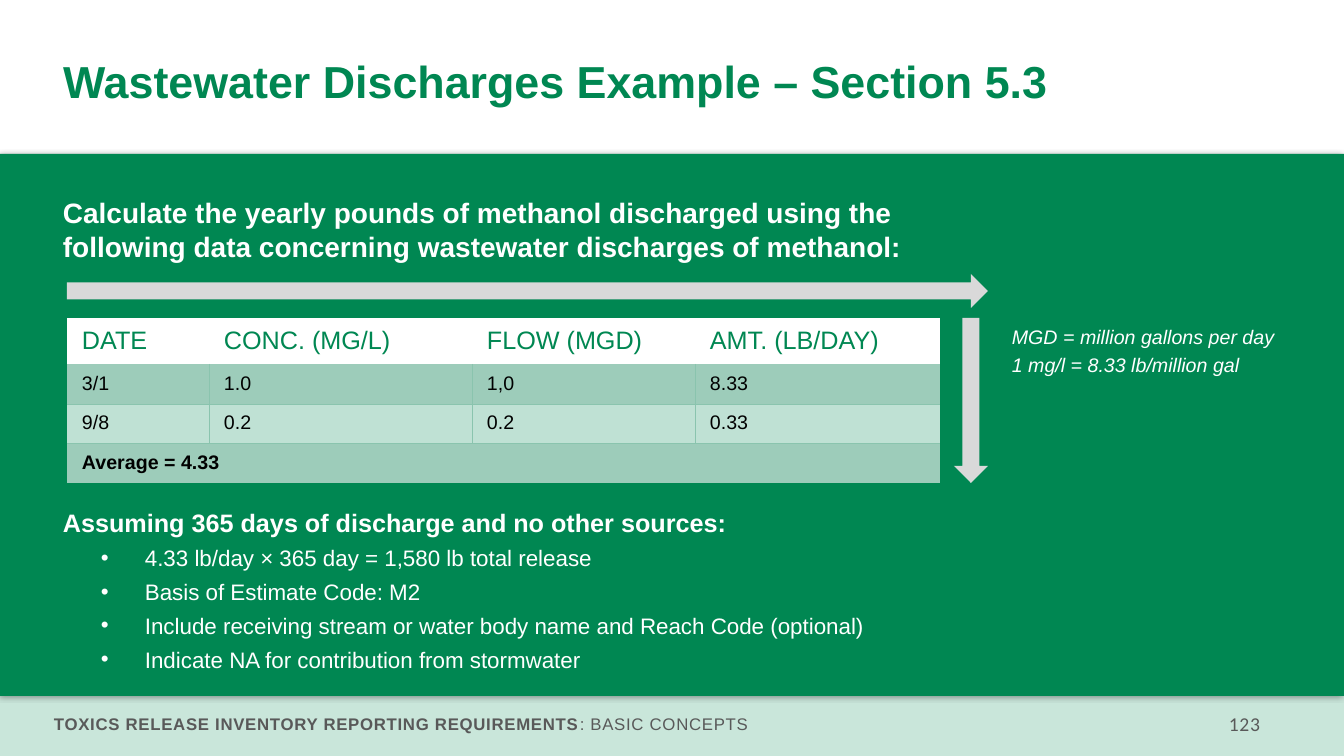
from lxml import etree
from pptx import Presentation
from pptx.dml.color import RGBColor
from pptx.enum.shapes import MSO_SHAPE
from pptx.enum.text import MSO_ANCHOR, PP_ALIGN
from pptx.oxml import parse_xml
from pptx.oxml.ns import nsdecls, qn
from pptx.util import Emu, Pt

RECTANGLE = MSO_SHAPE.RECTANGLE
RIGHT_ARROW = MSO_SHAPE.RIGHT_ARROW
DOWN_ARROW = MSO_SHAPE.DOWN_ARROW
MIDDLE = MSO_ANCHOR.MIDDLE
TOP = MSO_ANCHOR.TOP
LEFT = PP_ALIGN.LEFT
RIGHT = PP_ALIGN.RIGHT

GREEN = RGBColor(0x00, 0x87, 0x52)
PALE_GREEN = RGBColor(0xC9, 0xE6, 0xDA)
ROW_DARK = RGBColor(0x9D, 0xCC, 0xBA)
ROW_LIGHT = RGBColor(0xBF, 0xE1, 0xD4)
CELL_LINE = RGBColor(0x8A, 0xC4, 0xAE)
ARROW_GRAY = RGBColor(0xD9, 0xD9, 0xD9)
FOOTER_GRAY = RGBColor(0x59, 0x59, 0x59)
WHITE = RGBColor(0xFF, 0xFF, 0xFF)
BLACK = RGBColor(0x00, 0x00, 0x00)

PX = 914400 / 100.8
NO_STYLE = "{2D5ABB26-0587-4C30-8999-92F81FD0307C}"


def px(*lengths):
    return [Emu(round(length * PX)) for length in lengths]


def write(para, text, size, color, font="Arial", bold=False, italic=False,
          tracking=0, align=LEFT, before=0, spacing=1.0):
    para.alignment = align
    para.space_before = Pt(before)
    para.line_spacing = spacing
    span = para.add_run()
    span.text = text
    span.font.name = font
    span.font.size = Pt(size)
    span.font.color.rgb = color
    span.font.bold = bold
    span.font.italic = italic
    if tracking:
        span.font._element.set("spc", str(tracking))


deck = Presentation()
deck.slide_width, deck.slide_height = px(1344, 756)
page = deck.slides.add_slide(deck.slide_layouts[5])
shapes = page.shapes

blocks = []
for kind, place, color in [
    (RECTANGLE, (0, 696, 1344, 60), PALE_GREEN),
    (RECTANGLE, (0, 154, 1344, 542), GREEN),
    (RIGHT_ARROW, (67, 274, 921, 34), ARROW_GRAY),
    (DOWN_ARROW, (954, 318, 34, 165), ARROW_GRAY),
]:
    block = shapes.add_shape(kind, *px(*place))
    block.shadow.inherit = False
    block.fill.solid()
    block.fill.fore_color.rgb = color
    block.line.fill.background()
    blocks.append(block)

footer_band, panel, row_arrow, column_arrow = blocks
panel._element.spPr.find(qn("a:effectLst")).append(parse_xml(
    f'<a:outerShdw {nsdecls("a")} blurRad="50800" dist="12700" dir="5400000">'
    '<a:srgbClr val="000000"><a:alpha val="34000"/></a:srgbClr></a:outerShdw>'))

title = shapes.title
title.left, title.top, title.width, title.height = px(53, 43, 1217, 82)
title.text_frame.vertical_anchor = MIDDLE
write(title.text_frame.paragraphs[0], "Wastewater Discharges Example – Section 5.3",
      32, GREEN, bold=True, spacing=0.9)

frames = []
for place in [
    (53, 191, 971, 85),
    (1002, 324, 294, 60),
    (53, 502, 1108, 175),
    (44, 709, 849, 30),
    (1136, 707, 134, 34),
]:
    frame = shapes.add_textbox(*px(*place)).text_frame
    frame.word_wrap = True
    frame.vertical_anchor = TOP
    frames.append(frame)
task, units, answer, footer, page_number = frames

write(task.paragraphs[0],
      "Calculate the yearly pounds of methanol discharged using the following data "
      "concerning wastewater discharges of methanol:", 20, WHITE, bold=True)

write(units.paragraphs[0], "MGD = million gallons per day", 14, WHITE,
      italic=True, spacing=0.85)
write(units.add_paragraph(), "1 mg/l = 8.33 lb/million gal", 14, WHITE,
      italic=True, spacing=0.85, before=5.6)

write(answer.paragraphs[0], "Assuming 365 days of discharge and no other sources:",
      18, WHITE, bold=True)
margin, indent = px(82, -44)
for text in [
    "4.33 lb/day × 365 day = 1,580 lb total release",
    "Basis of Estimate Code: M2",
    "Include receiving stream or water body name and Reach Code (optional)",
    "Indicate NA for contribution from stormwater",
]:
    para = answer.add_paragraph()
    para.level = 1
    layout = para._p.get_or_add_pPr()
    layout.set("marL", str(margin))
    layout.set("indent", str(indent))
    etree.SubElement(layout, qn("a:buFont"), typeface="Arial")
    etree.SubElement(layout, qn("a:buChar"), char="•")
    write(para, text, 16, WHITE, before=5)

write(footer.paragraphs[0], "TOXICS RELEASE INVENTORY REPORTING REQUIREMENTS", 12,
      FOOTER_GRAY, bold=True, tracking=50)
write(footer.paragraphs[0], ": BASIC CONCEPTS", 12, FOOTER_GRAY, tracking=50)
write(page_number.paragraphs[0], "123", 14, FOOTER_GRAY, font="Calibri",
      tracking=50, align=RIGHT)

rows = [
    ["DATE", "CONC. (MG/L)", "FLOW (MGD)", "AMT. (LB/DAY)"],
    ["3/1", "1.0", "1,0", "8.33"],
    ["9/8", "0.2", "0.2", "0.33"],
    ["Average = 4.33"],
]
fills = [WHITE, ROW_DARK, ROW_LIGHT, ROW_DARK]
table = shapes.add_table(4, 4, *px(67, 318, 873, 165)).table
table._tbl.tblPr.find(qn("a:tableStyleId")).text = NO_STYLE
for column, width in zip(table.columns, px(142, 263, 223, 245)):
    column.width = width
for row, height in zip(table.rows, px(46, 40, 39, 40)):
    row.height = height
table.cell(3, 0).merge(table.cell(3, 3))

for r, texts in enumerate(rows):
    for c, text in enumerate(texts):
        cell = table.cell(r, c)
        cell.vertical_anchor = MIDDLE
        cell.margin_left, cell.margin_right = px(15, 15)
        cell.margin_top, cell.margin_bottom = px(7, 8)
        sides = (["lnL"] if r and c else []) + (["lnT"] if r > 1 else [])
        for side in sides:
            cell._tc.get_or_add_tcPr().append(parse_xml(
                f'<a:{side} {nsdecls("a")} w="6350"><a:solidFill>'
                f'<a:srgbClr val="{CELL_LINE}"/></a:solidFill></a:{side}>'))
        cell.fill.solid()
        cell.fill.fore_color.rgb = fills[r]
        write(cell.text_frame.paragraphs[0], text, 14 if r else 18,
              BLACK if r else GREEN, bold=r == 3)

deck.save("out.pptx")
